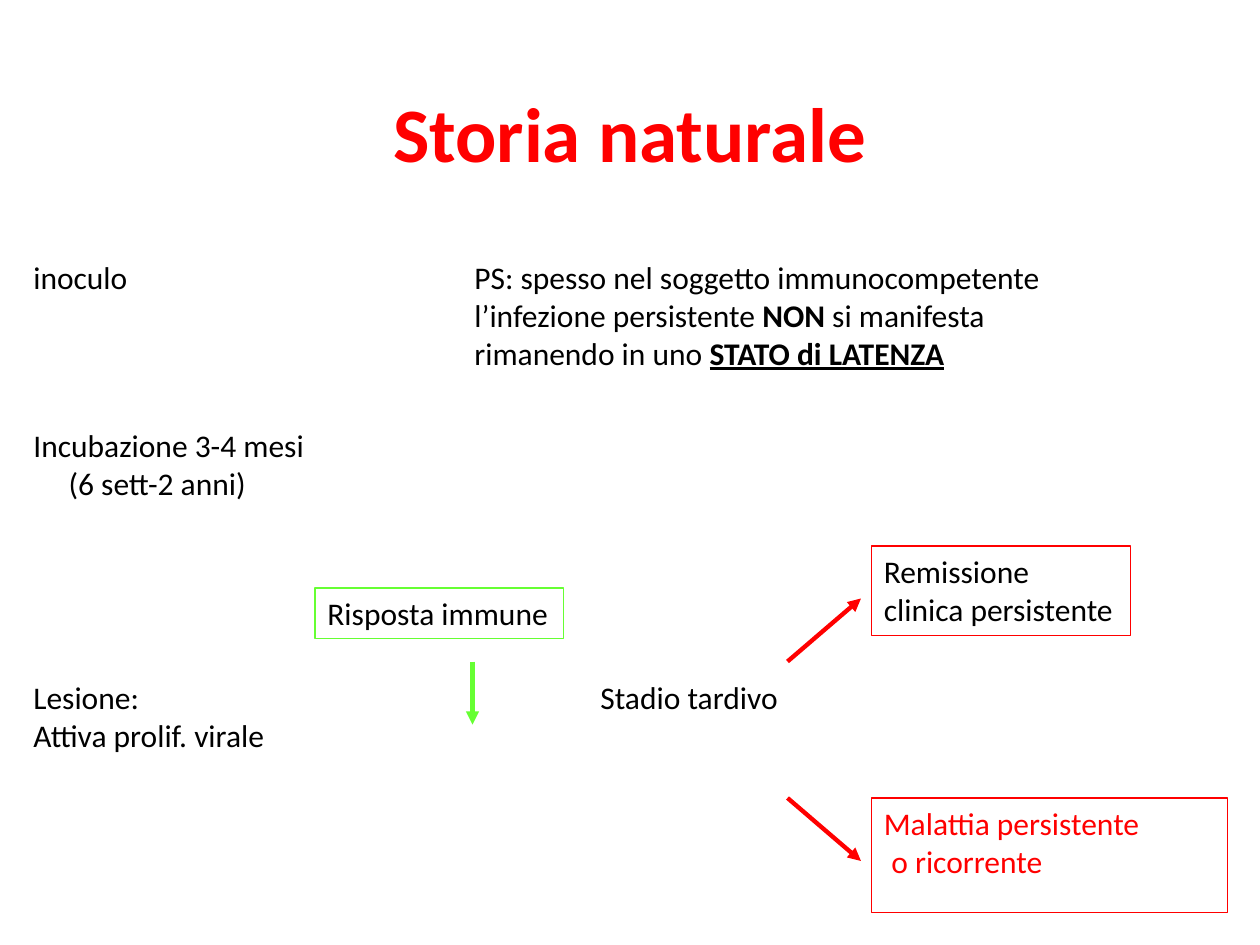
from lxml import etree
from pptx import Presentation
from pptx.dml.color import RGBColor
from pptx.enum.shapes import MSO_CONNECTOR, MSO_SHAPE
from pptx.enum.text import MSO_ANCHOR, PP_ALIGN
from pptx.oxml.ns import qn
from pptx.util import Inches, Pt

STRAIGHT = MSO_CONNECTOR.STRAIGHT
RECTANGLE = MSO_SHAPE.RECTANGLE
TOP, MIDDLE = MSO_ANCHOR.TOP, MSO_ANCHOR.MIDDLE
LEFT, CENTER = PP_ALIGN.LEFT, PP_ALIGN.CENTER

COLORS = {"text": "000000", "white": "FFFFFF", "red": "FF0000", "green": "66FF33"}
FONT = "Calibri"
CELL = Inches(10) // 120
LEFT_COL, RIGHT_COL = 2, 83
NOTE_ROW, INCUBATION_ROW, STAGE_ROW = 24, 40, 64


def grid(n):
    return round(n * CELL)


def color(name):
    return RGBColor.from_string(COLORS[name])


def write(sp, lines, tint="text", size=18, align=LEFT, anchor=TOP,
          bold=None, indent=0):
    tf = sp.text_frame
    tf.word_wrap = True
    tf.vertical_anchor = anchor
    for i, runs in enumerate(lines):
        p = tf.paragraphs[0] if i == 0 else tf.add_paragraph()
        p.alignment = align
        p.font.name, p.font.size, p.font.bold = FONT, Pt(size), bold
        p.font.color.rgb = color(tint)
        if i and indent:
            p._p.get_or_add_pPr().set("marL", str(Inches(indent)))
        for text, *styles in runs:
            r = p.add_run()
            r.text = text
            r.font.name, r.font.size = FONT, Pt(size)
            r.font.color.rgb = color(tint)
            r.font.bold = True if "bold" in styles else bold
            if "underline" in styles:
                r.font.underline = True


def add_box(s, box, lines, tint="text", border="white", indent=0):
    sp = s.shapes.add_shape(RECTANGLE, *map(grid, box))
    sp.shadow.inherit = False
    sp.fill.background()
    sp.line.color.rgb = color(border)
    sp.line.width = Pt(0.75)
    sp.text_frame.margin_right = 0
    write(sp, lines, tint, indent=indent)


def add_arrow(s, start, end, tint):
    c = s.shapes.add_connector(STRAIGHT, *map(grid, start + end))
    c.line.color.rgb = color(tint)
    c.line.width = Pt(2.5)
    etree.SubElement(c.line._get_or_add_ln(), qn("a:tailEnd"), type="triangle")
    etree.SubElement(c._element.spPr, qn("a:effectLst"))


def add_title(s, box):
    sp = s.shapes.add_textbox(*map(grid, box))
    write(sp, [[("Storia naturale",)]], "red", 44, CENTER, MIDDLE, True)


def add_note(s, box):
    add_box(s, box, [
        [("PS: spesso nel soggetto immunocompetente",)],
        [("l’infezione persistente ",), ("NON", "bold"), (" si manifesta",)],
        [("rimanendo in uno ",), ("STATO di LATENZA", "bold", "underline")],
    ])


def add_course(s, x):
    steps = [
        (NOTE_ROW, 11.5, 4.8, 0, ["inoculo"]),
        (INCUBATION_ROW, 28.4, 8.5, 0.28, ["Incubazione 3-4 mesi", "(6 sett-2 anni)"]),
        (STAGE_ROW, 25.1, 8.5, 0, ["Lesione:", "Attiva prolif. virale"]),
    ]
    for row, w, h, indent, lines in steps:
        add_box(s, (x, row, w, h), [[(t,)] for t in lines], indent=indent)


def add_immune_response(s, box):
    x, y, w, h = box
    add_box(s, box, [[("Risposta immune",)]], border="green")
    add_arrow(s, (x + 15, y + 7), (x + 15, y + 13), "green")


def add_late_stage(s, x, y):
    add_box(s, (x, y, 25.1, 8.5), [[("Stadio tardivo",)]])
    outcomes = [
        (-12, 24.65, 8.5, "text", 0, ["Remissione", "clinica persistente"], -1, -7),
        (12, 33.95, 10.9, "red", 0.06, ["Malattia persistente", "o ricorrente"], 12, 18),
    ]
    for dy, w, h, tint, indent, lines, start, end in outcomes:
        add_box(s, (RIGHT_COL, y + dy, w, h), [[(t,)] for t in lines],
                tint, "red", indent)
        add_arrow(s, (x + 19, y + start), (RIGHT_COL - 1, y + end), "red")


def main():
    prs = Presentation()
    prs.slide_width, prs.slide_height = grid(120), grid(90)
    s = prs.slides.add_slide(prs.slide_layouts[6])
    add_title(s, (9, 5, 102, 15))
    add_course(s, LEFT_COL)
    add_immune_response(s, (30, 56, 23.7, 4.8))
    add_late_stage(s, 56, STAGE_ROW)
    add_note(s, (44, NOTE_ROW, 57, 12.1))
    prs.save("out.pptx")


if __name__ == "__main__":
    main()
